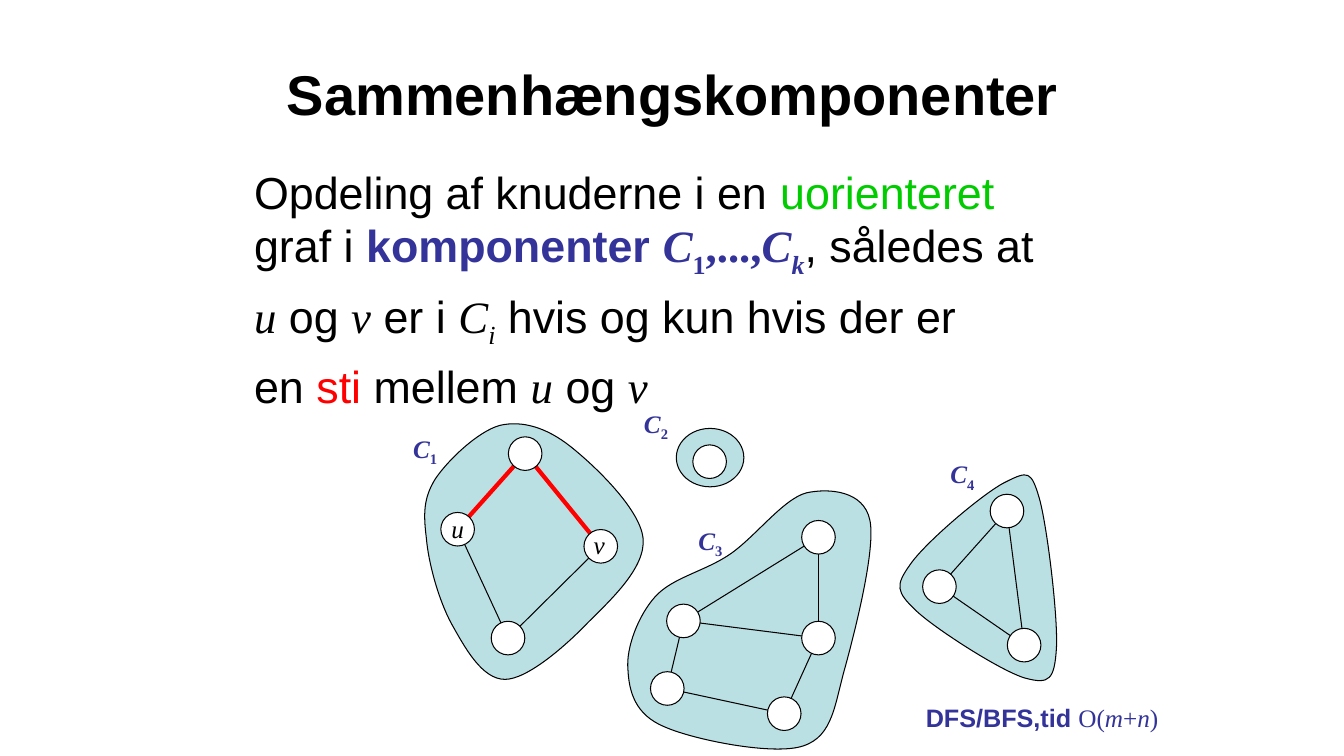
from pptx import Presentation, util as u
from pptx.dml.color import RGBColor
from pptx.enum import shapes, text
from pptx.oxml import parse_xml
from pptx.oxml.ns import nsdecls, qn

THEME = {
    "black": "000000", "white": "FFFFFF", "green": "00CC00", "red": "FF0000",
    "blue": "333399", "region": "BBE0E3", "sans": "Arial", "serif": "Times New Roman",
    "title": 40, "body": 32, "label": 18, "thin": 0.75, "thick": 3,
}

# A run is (wording, format words); places are in inches.
TITLE = [[("Sammenhængskomponenter", "bold")]]
BODY = [
    [("Opdeling af knuderne i en ", ""), ("uorienteret", "green"), (" graf i ", ""),
     ("komponenter ", "blue bold"), ("C", "blue bold serif italic"),
     ("1", "blue bold serif sub"), (",...,", "blue bold serif"),
     ("C", "blue bold serif italic"), ("k", "blue bold serif italic sub"),
     (", således at", "")],
    [("u", "serif italic"), (" og ", ""), ("v", "serif italic"), (" er i ", ""),
     ("C", "serif italic"), ("i", "serif italic sub"),
     (" hvis og kun hvis der er", "")],
    [("en ", ""), ("sti", "red"), (" mellem ", ""), ("u", "serif italic"),
     (" og ", ""), ("v", "serif italic")],
]
TIME = [[("DFS/BFS,tid ", "blue bold"), ("O(", "blue serif"),
         ("m", "blue serif italic"), ("+", "blue serif"),
         ("n", "blue serif italic"), (")", "blue serif")]]

# Start point, then curves of two control points and an end point.
FOURTH = [(9.98, 4.78),
          (10.2, 4.67), (10.23, 4.67), (10.31, 4.94),
          (10.39, 5.22), (10.5, 6.14), (10.48, 6.44),
          (10.46, 6.74), (10.41, 6.79), (10.18, 6.73),
          (9.95, 6.67), (9.28, 6.24), (9.09, 6.06),
          (8.89, 5.87), (8.88, 5.81), (9.03, 5.6),
          (9.18, 5.38), (9.77, 4.88), (9.98, 4.78)]
THIRD = [(7.24, 5.5),
         (7.49, 5.33), (7.77, 4.95), (8, 4.89),
         (8.23, 4.84), (8.57, 4.87), (8.63, 5.16),
         (8.69, 5.44), (8.49, 6.23), (8.39, 6.6),
         (8.28, 6.98), (8.27, 7.3), (7.97, 7.4),
         (7.68, 7.5), (6.88, 7.34), (6.59, 7.21),
         (6.3, 7.09), (6.24, 6.86), (6.23, 6.64),
         (6.21, 6.43), (6.33, 6.11), (6.5, 5.92),
         (6.67, 5.73), (6.99, 5.67), (7.24, 5.5)]
FIRST = [(4.23, 5.34),
         (4.2, 5.1), (4.2, 4.94), (4.32, 4.75),
         (4.44, 4.57), (4.74, 4.28), (4.96, 4.22),
         (5.18, 4.17), (5.42, 4.24), (5.66, 4.43),
         (5.9, 4.62), (6.35, 5.05), (6.38, 5.34),
         (6.41, 5.63), (6.06, 5.95), (5.83, 6.18),
         (5.61, 6.41), (5.23, 6.74), (5.01, 6.74),
         (4.78, 6.74), (4.61, 6.42), (4.48, 6.19),
         (4.35, 5.95), (4.25, 5.58), (4.23, 5.34)]
SECOND = (6.71, 4.25, 0.67, 0.58)
NODES = {
    "u": (4.54, 5.25), "v": (5.96, 5.42), "top": (5.21, 4.5), "low": (5.04, 6.33),
    "lone": (7.04, 4.58),
    "a": (6.78, 6.16), "b": (6.62, 6.83), "c": (7.78, 7.08),
    "d": (8.12, 6.33), "e": (8.12, 5.33),
    "f": (9.99, 5.07), "g": (9.32, 5.82), "h": (10.16, 6.4),
}
PATH = [("top", "v"), ("u", "top")]
EDGES = [("u", "low"), ("low", "v"),
         ("a", "b"), ("b", "c"), ("c", "d"), ("d", "e"), ("e", "a"), ("d", "a"),
         ("h", "g"), ("h", "f"), ("g", "f")]
NAMES = {"1": (4, 4.25), "4": (9.33, 4.5), "3": (6.83, 5.16), "2": (6.29, 4)}
LETTERS = {"u": (4.38, 5.04), "v": (5.79, 5.2)}
NODE = 1 / 3


def cm(inch):
    return u.Cm(inch * 2.54)


def color(name):
    return RGBColor.from_string(THEME[name])


def write(frame, paras, size="label", align=None, wrap=True, anchor=None,
          fit=text.MSO_AUTO_SIZE.SHAPE_TO_FIT_TEXT):
    frame.word_wrap = wrap
    frame.auto_size = fit
    if anchor is not None:
        frame.vertical_anchor = anchor
    for i, runs in enumerate(paras):
        para = frame.paragraphs[0] if i == 0 else frame.add_paragraph()
        if align is not None:
            para.alignment = align
        for words, form in runs:
            marks = form.split()
            run = para.add_run()
            run.text = words
            font = run.font
            font.size = u.Pt(THEME[size])
            font.name = THEME["serif" if "serif" in marks else "sans"]
            font.bold = "bold" in marks
            font.italic = "italic" in marks
            tint = [m for m in marks if m in ("green", "red", "blue")]
            font.color.rgb = color(tint[0] if tint else "black")
            if "sub" in marks:
                font._element.set("baseline", "-25000")


def place(slide, shape, *box):
    """Set the box of a placeholder and bring it to the front."""
    shape.left, shape.top, shape.width, shape.height = map(cm, box)
    slide.shapes._spTree.append(shape._element)


def paint(shape, fill):
    shape.shadow.inherit = False
    shape.fill.solid()
    shape.fill.fore_color.rgb = color(fill)
    shape.line.color.rgb = color("black")
    shape.line.width = u.Pt(THEME["thin"])


def oval(slide, box, fill):
    paint(slide.shapes.add_shape(shapes.MSO_SHAPE.OVAL, *map(cm, box)), fill)


def label(slide, box, paras, **form):
    write(slide.shapes.add_textbox(*map(cm, box)).text_frame, paras, **form)


def region(slide, points):
    """Draw a closed outline, turning each three line segments into one curve."""
    start, *rest = [tuple(map(cm, point)) for point in points]
    form = slide.shapes.build_freeform(*start)
    form.add_line_segments(rest, close=True)
    shape = form.convert_to_shape()
    lines = list(shape._element.iter(qn("a:lnTo")))
    for i in range(0, len(lines), 3):
        bend = parse_xml(f"<a:cubicBezTo {nsdecls('a')}/>")
        lines[i].addprevious(bend)
        for line in lines[i:i + 3]:
            bend.append(line[0])
            line.getparent().remove(line)
    paint(shape, "region")


def edge(slide, ends, tint, width):
    (x1, y1), (x2, y2) = (NODES[name] for name in ends)
    line = slide.shapes.add_connector(shapes.MSO_CONNECTOR.STRAIGHT,
                                      *map(cm, (x1, y1, x2, y2)))
    line.line.color.rgb = color(tint)
    line.line.width = u.Pt(THEME[width])
    line._element.spPr.append(parse_xml(f"<a:effectLst {nsdecls('a')}/>"))


def main():
    deck = Presentation()
    deck.slide_width, deck.slide_height = cm(40 / 3), cm(7.5)
    slide = deck.slides.add_slide(deck.slide_layouts[1])
    head, body = slide.placeholders

    region(slide, FOURTH)
    oval(slide, SECOND, "region")
    region(slide, THIRD)
    region(slide, FIRST)

    place(slide, head, 1.67, 0.3, 10, 1.25)
    write(head.text_frame, TITLE, size="title", align=text.PP_ALIGN.CENTER,
          anchor=text.MSO_ANCHOR.MIDDLE, fit=text.MSO_AUTO_SIZE.NONE)
    place(slide, body, 2.42, 1.58, 8.42, 3.42)
    write(body.text_frame, BODY, size="body", fit=text.MSO_AUTO_SIZE.NONE)
    for para in body.text_frame.paragraphs:
        props = para._p.get_or_add_pPr()
        props.set("marL", "0")
        props.set("indent", "0")
        props.append(parse_xml(f"<a:buNone {nsdecls('a')}/>"))
    label(slide, (8.92, 6.92, 2.67, 0.4), TIME, align=text.PP_ALIGN.RIGHT)

    for ends in PATH:
        edge(slide, ends, "red", "thick")
    for ends in EDGES:
        edge(slide, ends, "black", "thin")
    for x, y in NODES.values():
        oval(slide, (x - NODE / 2, y - NODE / 2, NODE, NODE), "white")

    for index, spot in NAMES.items():
        label(slide, (*spot, 0.45, 0.4),
              [[("C", "blue bold serif italic"), (index, "blue bold serif sub")]],
              wrap=False)
    for letter, spot in LETTERS.items():
        label(slide, (*spot, NODE, 0.4), [[(letter, "serif italic")]], wrap=False)

    deck.save("out.pptx")


if __name__ == "__main__":
    main()
